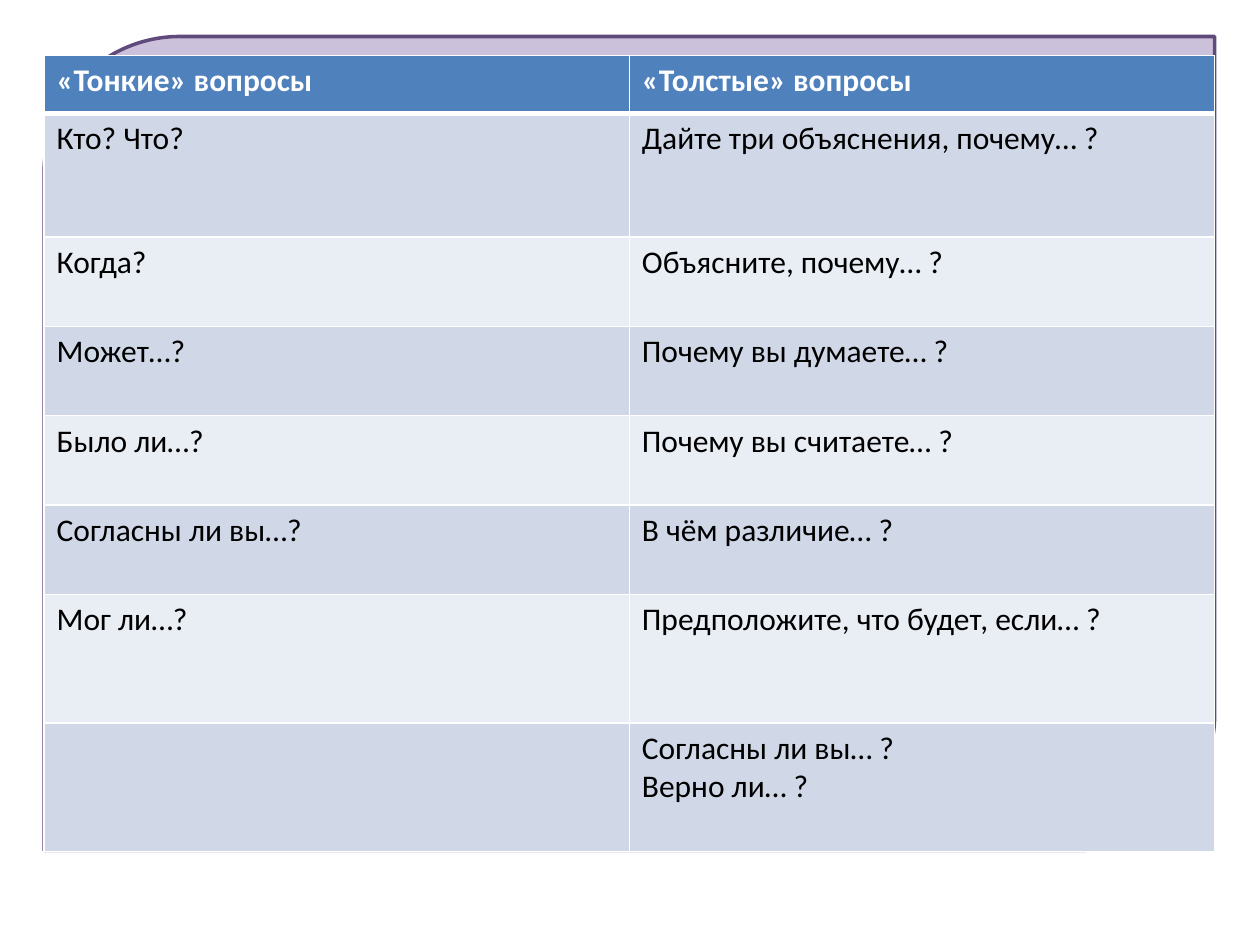
from lxml.etree import SubElement
from pptx import Presentation
from pptx.dml.color import RGBColor
from pptx.enum.shapes import MSO_SHAPE
from pptx.oxml.ns import qn
from pptx.util import Inches, Pt

WHITE = RGBColor(0xFF, 0xFF, 0xFF)
BLACK = RGBColor(0x00, 0x00, 0x00)
LILAC = RGBColor(0xCC, 0xC1, 0xDA)
PURPLE = RGBColor(0x60, 0x4A, 0x7B)
HEADER_BLUE = RGBColor(0x4F, 0x81, 0xBD)
BANDS = RGBColor(0xE9, 0xED, 0xF4), RGBColor(0xD0, 0xD8, 0xE8)

PAGE_WIDTH, PAGE_HEIGHT = Inches(10), Inches(7.5)
MARGIN = Inches(0.35)
CONTENT_WIDTH = Inches(9.29)

QUESTIONS = [
    ("«Тонкие» вопросы", "«Толстые» вопросы"),
    ("Кто? Что?", "Дайте три объяснения, почему… ?"),
    ("Когда?", "Объясните, почему… ?"),
    ("Может…?", "Почему вы думаете… ?"),
    ("Было ли…?", "Почему вы считаете… ?"),
    ("Согласны ли вы…?", "В чём различие… ?"),
    ("Мог ли…?", "Предположите, что будет, если… ?"),
    ("", "Согласны ли вы… ?\nВерно ли… ?"),
]
ROW_HEIGHTS = [0.46, 0.98] + [0.71] * 4 + [1.02] * 2


def add_backdrop(page, left, top, width, height):
    """Place the lilac panel with two rounded corners."""
    panel = page.shapes.add_shape(
        MSO_SHAPE.ROUND_2_DIAG_RECTANGLE, left, top, width, height)
    panel.shadow.inherit = False
    panel.fill.solid()
    panel.fill.fore_color.rgb = LILAC
    panel.line.color.rgb = PURPLE
    panel.line.width = Pt(2)


def set_borders(cell, top, bottom):
    """Draw white borders, with the top and bottom widths in points."""
    properties = cell._tc.get_or_add_tcPr()
    for side, points in (("L", 1), ("R", 1), ("T", top), ("B", bottom)):
        line = SubElement(properties, qn(f"a:ln{side}"), w=str(Pt(points)))
        fill = SubElement(line, qn("a:solidFill"))
        SubElement(fill, qn("a:srgbClr"), val=str(WHITE))


def fill_cell(cell, text, row):
    """Write and style one cell according to its row."""
    is_header = row == 0
    set_borders(cell, top=3 if row == 1 else 1, bottom=3 if is_header else 1)
    cell.fill.solid()
    cell.fill.fore_color.rgb = HEADER_BLUE if is_header else BANDS[row % 2]
    cell.text = text
    for para in cell.text_frame.paragraphs:
        para.font.name = "Calibri"
        para.font.size = Pt(18)
        para.font.bold = is_header
        para.font.color.rgb = WHITE if is_header else BLACK


def add_question_table(page, left, top, width):
    """Place the two-column table of thin and thick questions."""
    columns = len(QUESTIONS[0])
    table = page.shapes.add_table(
        len(QUESTIONS), columns, left, top, width,
        Inches(sum(ROW_HEIGHTS))).table
    for column in table.columns:
        column.width = width // columns
    for row, (texts, height) in enumerate(zip(QUESTIONS, ROW_HEIGHTS)):
        table.rows[row].height = Inches(height)
        for column, text in enumerate(texts):
            fill_cell(table.cell(row, column), text, row)


def main():
    """Build the slide and save the deck."""
    deck = Presentation()
    deck.slide_width, deck.slide_height = PAGE_WIDTH, PAGE_HEIGHT
    page = deck.slides.add_slide(deck.slide_layouts[6])
    add_backdrop(page, MARGIN, Inches(0.29), CONTENT_WIDTH, Inches(6.46))
    add_question_table(page, MARGIN, Inches(0.44), CONTENT_WIDTH)
    deck.save("out.pptx")


if __name__ == "__main__":
    main()
